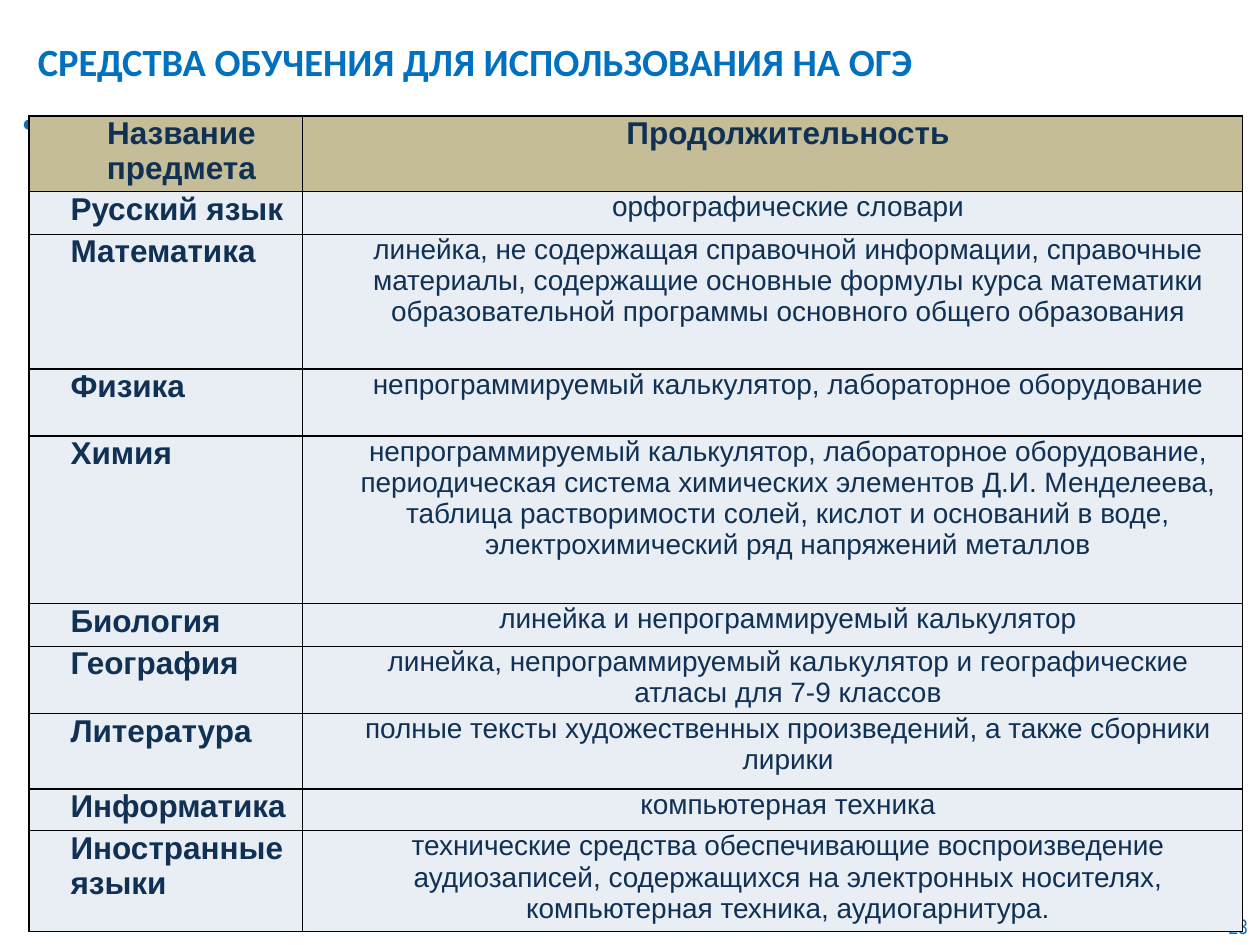
from pptx import Presentation, util as u
from pptx.dml.color import RGBColor
from pptx.enum import shapes, text
from pptx.oxml import parse_xml
from pptx.oxml.ns import nsdecls

BLUE, NAVY, BLACK = "0070C0", "103154", "000000"
HEADER_FILL, BODY_FILL = "C4BD97", "E9EDF4"
LEFT, CENTER, RIGHT = text.PP_ALIGN.LEFT, text.PP_ALIGN.CENTER, text.PP_ALIGN.RIGHT

COLUMN_WIDTHS = (2.17, 7.46)
HEADER = ("Название предмета", "Продолжительность")
HEADER_HEIGHT = 0.53
# Subject, permitted aids, row height
SUBJECTS = [
    ("Русский язык", "орфографические словари", 0.34),
    ("Математика", "линейка, не содержащая справочной информации, справочные материалы, "
     "содержащие основные формулы курса математики образовательной программы "
     "основного общего образования", 1.07),
    ("Физика", "непрограммируемый калькулятор, лабораторное оборудование", 0.53),
    ("Химия", "непрограммируемый калькулятор, лабораторное оборудование, "
     "периодическая система химических элементов Д.И. Менделеева, таблица "
     "растворимости солей, кислот и оснований в воде, электрохимический ряд "
     "напряжений металлов", 1.33),
    ("Биология", "линейка и непрограммируемый калькулятор", 0.34),
    ("География", "линейка, непрограммируемый калькулятор и географические атласы "
     "для 7-9 классов", 0.53),
    ("Литература", "полные тексты художественных произведений, а также сборники лирики", 0.6),
    ("Информатика", "компьютерная техника", 0.33),
    ("Иностранные языки", "технические средства обеспечивающие воспроизведение "
     "аудиозаписей, содержащихся на электронных носителях, компьютерная техника, "
     "аудиогарнитура.", 0.8),
]


def color(hex_value):
    return RGBColor.from_string(hex_value)


def write(frame, wording, size, fill, font="Arial", bold=False, align=LEFT, indent=0):
    paragraph = frame.paragraphs[0]
    paragraph.alignment = align
    properties = paragraph._p.get_or_add_pPr()
    properties.set("marL", str(u.Inches(indent)))
    properties.set("indent", "0")
    run = paragraph.add_run()
    run.text = wording
    run.font.size, run.font.name, run.font.bold = u.Pt(size), font, bold
    run.font.color.rgb = color(fill)


def add_title(slide, wording):
    title = slide.shapes.title
    title.left, title.top = u.Inches(0.2), u.Inches(0.13)
    title.width, title.height = u.Inches(9), u.Inches(0.71)
    title.text_frame.vertical_anchor = text.MSO_ANCHOR.MIDDLE
    write(title.text_frame, wording, 22, BLUE, font="Calibri", bold=True)


def add_rule(slide, left, right, y):
    rule = slide.shapes.add_connector(
        shapes.MSO_CONNECTOR.STRAIGHT, u.Inches(left), u.Inches(y), u.Inches(right), u.Inches(y))
    rule.line.color.rgb = color(BLUE)
    rule.line.width = u.Pt(1.25)
    rule.line._get_or_add_ln().append(parse_xml(f'<a:headEnd {nsdecls("a")} type="oval"/>'))
    rule._element.spPr.append(parse_xml(f'<a:effectLst {nsdecls("a")}/>'))


def add_page_number(slide, number):
    box = slide.shapes.add_textbox(u.Inches(9.49), u.Inches(7.2), u.Inches(0.51), u.Inches(0.3))
    box.text_frame.word_wrap = True
    write(box.text_frame, number, 12, BLUE, font="Arial Narrow", align=RIGHT)


def format_cell(cell, wording, background, **text_format):
    cell.margin_left = cell.margin_right = u.Inches(0.08)
    cell.margin_top = cell.margin_bottom = 0
    for side in "LRTB":
        cell._tc.get_or_add_tcPr().append(parse_xml(
            f'<a:ln{side} {nsdecls("a")} w="{u.Pt(1)}"><a:solidFill>'
            f'<a:srgbClr val="{BLACK}"/></a:solidFill></a:ln{side}>'))
    cell.fill.solid()
    cell.fill.fore_color.rgb = color(background)
    write(cell.text_frame, wording, fill=NAVY, indent=0.25, **text_format)


def add_aids_table(slide):
    heights = [HEADER_HEIGHT] + [height for _, _, height in SUBJECTS]
    table = slide.shapes.add_table(
        len(heights), len(COLUMN_WIDTHS), u.Inches(0.23), u.Inches(0.92),
        u.Inches(sum(COLUMN_WIDTHS)), u.Inches(sum(heights))).table
    table.horz_banding = False
    for column, width in zip(table.columns, COLUMN_WIDTHS):
        column.width = u.Inches(width)
    for row, height in zip(table.rows, heights):
        row.height = u.Inches(height)

    # Header row
    for index, heading in enumerate(HEADER):
        format_cell(table.cell(0, index), heading, HEADER_FILL, size=18, bold=True, align=CENTER)
    # One row per subject
    for index, (subject, aids, _) in enumerate(SUBJECTS, start=1):
        format_cell(table.cell(index, 0), subject, BODY_FILL, size=18, bold=True)
        format_cell(table.cell(index, 1), aids, BODY_FILL, size=16, align=CENTER)


def main():
    deck = Presentation()
    deck.slide_width, deck.slide_height = u.Inches(10), u.Inches(7.5)
    slide = deck.slides.add_slide(deck.slide_layouts[5])
    add_title(slide, "СРЕДСТВА ОБУЧЕНИЯ ДЛЯ ИСПОЛЬЗОВАНИЯ НА ОГЭ")
    add_rule(slide, 0.23, 9.73, 0.99)
    add_page_number(slide, "23")
    add_aids_table(slide)
    deck.save("out.pptx")


if __name__ == "__main__":
    main()
